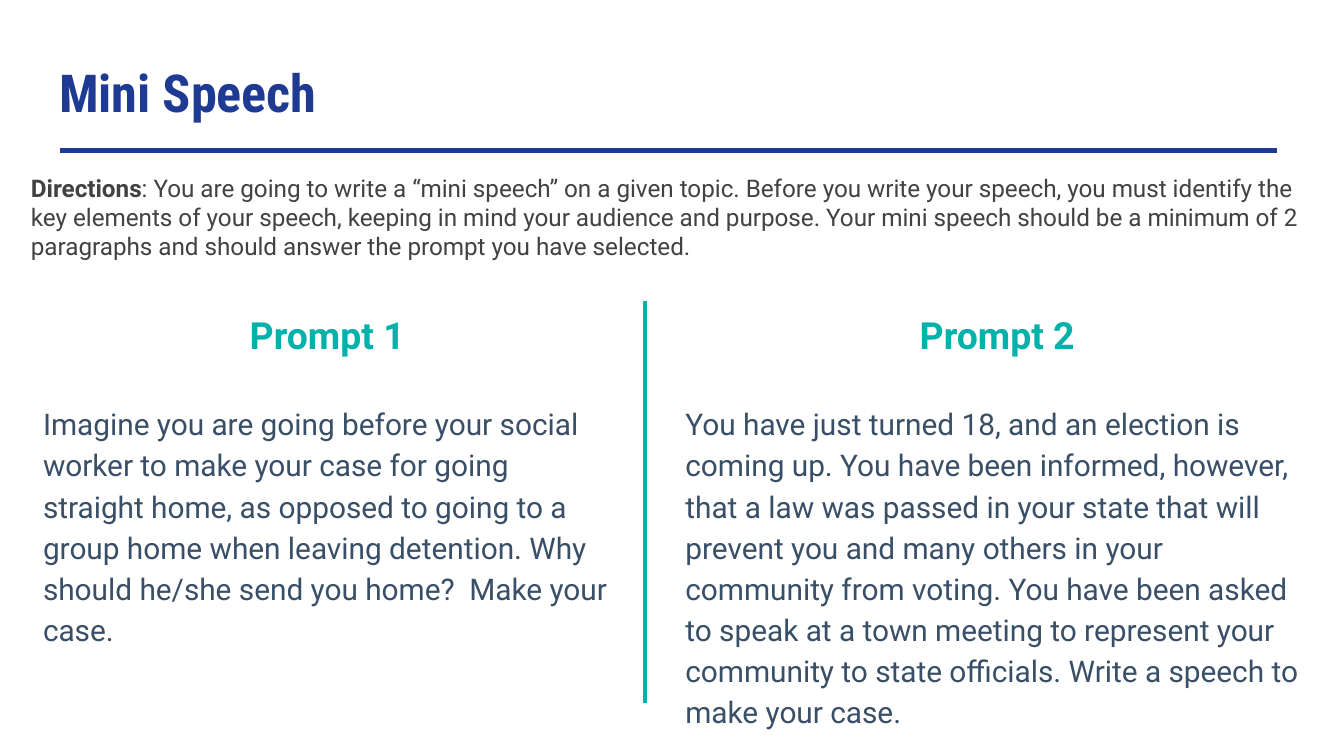
from pptx import Presentation
from pptx.dml.color import RGBColor
from pptx.enum.shapes import MSO_CONNECTOR as Connector
from pptx.enum.text import MSO_ANCHOR as Anchor, MSO_AUTO_SIZE as AutoSize, PP_ALIGN as Align
from pptx.oxml.ns import qn
from pptx.util import Inches, Pt
from lxml.etree import SubElement

NAVY = "1F3A93"
TEAL = "00B2A9"
GRAY = "424242"
SLATE = "394F67"

DIRECTIONS = (
    ": You are going to write a “mini speech” on a given topic. Before you write your speech, "
    "you must identify the key elements of your speech, keeping in mind your audience and purpose. "
    "Your mini speech should be a minimum of 2 paragraphs and should answer the prompt you have selected."
)
PROMPTS = [
    (2, "Prompt 1", (0.22, 2.17, 4.43, 3.98),
     "Imagine you are going before your social worker to make your case for going straight home, "
     "as opposed to going to a group home when leaving detention. Why should he/she send you home?  "
     "Make your case."),
    (4, "Prompt 2", (5, 2.17, 4.84, 4.23),
     "You have just turned 18, and an election is coming up. You have been informed, however, "
     "that a law was passed in your state that will prevent you and many others in your community "
     "from voting. You have been asked to speak at a town meeting to represent your community "
     "to state officials. Write a speech to make your case."),
]


def color(hex_code):
    return RGBColor.from_string(hex_code)


def place(holder, box):
    holder.left, holder.top, holder.width, holder.height = map(Inches, box)
    frame = holder.text_frame
    frame.word_wrap = True
    frame.auto_size = AutoSize.NONE
    frame.vertical_anchor = Anchor.TOP
    frame.margin_left = frame.margin_right = Inches(0.1)
    frame.margin_top = frame.margin_bottom = Inches(0.1)
    return frame


def format_paragraph(paragraph, align=Align.LEFT, before=0, after=0, spacing=1.0):
    properties = paragraph._p.get_or_add_pPr()
    properties.set("marL", "0")
    properties.set("indent", "0")
    paragraph.alignment = align
    paragraph.line_spacing = spacing
    paragraph.space_before = Pt(before)
    paragraph.space_after = Pt(after)
    SubElement(properties, qn("a:buNone"))
    return paragraph


def add_run(paragraph, text, size, hex_code, bold=False, font="Roboto"):
    run = paragraph.add_run()
    run.text = text
    run.font.name = font
    run.font.size = Pt(size)
    run.font.bold = bold
    run.font.color.rgb = color(hex_code)


def add_rule(slide, start, end, hex_code):
    rule = slide.shapes.add_connector(Connector.STRAIGHT, *map(Inches, start + end))
    rule.line.color.rgb = color(hex_code)
    rule.line.width = Pt(2.25)
    SubElement(rule._element.spPr, qn("a:effectLst"))


def fill_title(slide):
    frame = place(slide.shapes.title, (0.34, 0.35, 9.32, 0.63))
    heading = format_paragraph(frame.paragraphs[0])
    add_run(heading, "Mini Speech", 28, NAVY, True, "Roboto Condensed")


def fill_directions(holder):
    frame = place(holder, (0.13, 1.19, 9.68, 0.92))
    directions = format_paragraph(frame.paragraphs[0], after=16)
    add_run(directions, "Directions", 13, GRAY, True)
    add_run(directions, DIRECTIONS, 13, GRAY)


def fill_prompt(holder, box, label, task):
    frame = place(holder, box)
    heading = format_paragraph(frame.paragraphs[0], Align.CENTER, spacing=1.15)
    add_run(heading, label, 20, TEAL, True)
    body = format_paragraph(frame.add_paragraph(), before=23.5, spacing=1.15)
    add_run(body, task, 16, SLATE)


def main():
    deck = Presentation()
    deck.slide_width = Inches(10)
    deck.slide_height = deck.slide_width * 9 // 16
    slide = deck.slides.add_slide(deck.slide_layouts.get_by_name("Comparison"))
    holders = {holder.placeholder_format.idx: holder for holder in slide.placeholders}

    fill_title(slide)
    add_rule(slide, (0.45, 1.12), (9.5, 1.12), NAVY)
    fill_directions(holders[1])
    for index, label, box, task in PROMPTS:
        fill_prompt(holders[index], box, label, task)
    add_rule(slide, (4.8, 2.24), (4.8, 5.23), TEAL)

    unused = holders[3]._element
    unused.getparent().remove(unused)
    deck.save("out.pptx")


if __name__ == "__main__":
    main()
